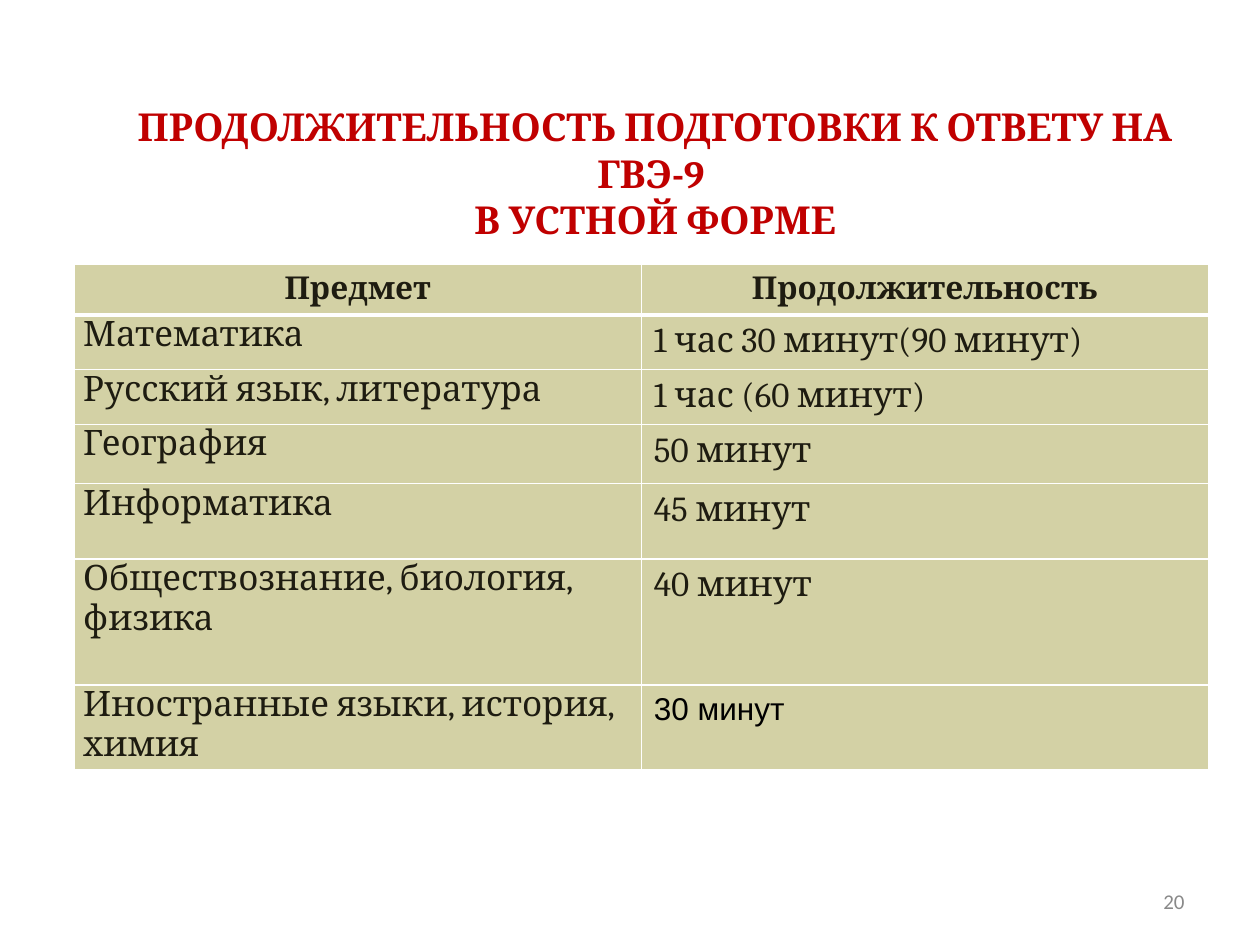
"""Build the slide on preparation times for the oral GVE-9 exam."""
from dataclasses import dataclass
from typing import Any

from lxml import etree
from pptx import Presentation
from pptx import util as u
from pptx.dml.color import RGBColor
from pptx.enum import text
from pptx.oxml import ns


@dataclass(frozen=True)
class Style:
    font: str
    size: int
    color: str
    bold: bool = False


@dataclass(frozen=True)
class Theme:
    title: Style = Style("Cambria", 22, "C00000", True)
    header: Style = Style("Cambria", 18, "1E1C11", True)
    body: Style = Style("Cambria", 20, "1E1C11")
    plain: Style = Style("Arial", 18, "000000")
    number: Style = Style("Calibri", 12, "898989")
    fill: str = "D3D1A5"
    border: str = "FFFFFF"
    thin: int = 1
    thick: int = 3


@dataclass(frozen=True)
class Row:
    subject: str
    duration: str
    height: float
    align: text.PP_ALIGN = text.PP_ALIGN.LEFT
    duration_style: Style = Theme.body


@dataclass(frozen=True)
class Label:
    words: str
    area: tuple[float, float, float, float]
    style: Style
    align: text.PP_ALIGN


THEME = Theme()
ALIGN = text.PP_ALIGN
HEADER = Row("Предмет", "Продолжительность", 0.36, ALIGN.CENTER, THEME.header)
ROWS = [
    Row("Математика", "1 час 30 минут(90 минут)", 0.31, ALIGN.JUSTIFY),
    Row("Русский язык, литература", "1 час (60 минут)", 0.31, ALIGN.JUSTIFY),
    Row("География", "50 минут", 0.47),
    Row("Информатика", "45 минут", 0.6),
    Row("Обществознание, биология, физика", "40 минут", 1),
    Row("Иностранные языки, история, химия", "30 минут", 0.5, duration_style=THEME.plain),
]
LABELS = [
    Label("ПРОДОЛЖИТЕЛЬНОСТЬ ПОДГОТОВКИ К ОТВЕТУ НА ГВЭ-9 \vВ УСТНОЙ ФОРМЕ",
          (0.7, 0.94, 9, 0.86), THEME.title, ALIGN.CENTER),
    Label("20", (7.17, 6.95, 2.33, 0.4), THEME.number, ALIGN.RIGHT),
]


def apply(target: Any, values: dict[str, Any]) -> None:
    """Set each named attribute on the target."""
    for name, value in values.items():
        setattr(target, name, value)


def write(frame: Any, words: str, style: Style, align: text.PP_ALIGN) -> None:
    """Write one styled paragraph into a text frame."""
    para = frame.paragraphs[0]
    apply(para, {"text": words, "alignment": align})
    for span in para.runs:
        apply(span.font, {"name": style.font, "size": u.Pt(style.size), "bold": style.bold})
        span.font.color.rgb = RGBColor.from_string(style.color)


def add_label(page: Any, label: Label) -> None:
    """Add a vertically centred text box."""
    box = page.shapes.add_textbox(*map(u.Inches, label.area))
    apply(box.text_frame, {"word_wrap": True, "vertical_anchor": text.MSO_ANCHOR.MIDDLE})
    write(box.text_frame, label.words, label.style, label.align)


def paint_cell(cell: Any, top: int, bottom: int) -> None:
    """Give a cell its borders and fill."""
    properties = cell._tc.get_or_add_tcPr()
    for side, width in {"L": THEME.thin, "R": THEME.thin, "T": top, "B": bottom}.items():
        line = etree.SubElement(properties, ns.qn(f"a:ln{side}"), w=str(u.Pt(width)))
        solid = etree.SubElement(line, ns.qn("a:solidFill"))
        etree.SubElement(solid, ns.qn("a:srgbClr"), val=THEME.border)
    cell.fill.solid()
    cell.fill.fore_color.rgb = RGBColor.from_string(THEME.fill)


def add_schedule(page: Any) -> None:
    """Add the table of subjects and durations."""
    rows = [HEADER, *ROWS]
    area = map(u.Inches, (0.59, 2.1, 9, sum(row.height for row in rows)))
    table = page.shapes.add_table(len(rows), 2, *area).table
    margins = {"margin_left": u.Inches(0.07), "margin_right": u.Inches(0.07),
               "margin_top": 0, "margin_bottom": 0}
    for index, row in enumerate(rows):
        table.rows[index].height = u.Inches(row.height)
        subject, duration = table.rows[index].cells
        is_header = row is HEADER
        if not is_header:
            apply(subject, margins)
        write(subject.text_frame, row.subject, THEME.header if is_header else THEME.body, row.align)
        write(duration.text_frame, row.duration, row.duration_style,
              row.align if is_header else ALIGN.LEFT)
        for cell in (subject, duration):
            paint_cell(cell, THEME.thick if index == 1 else THEME.thin,
                       THEME.thick if is_header else THEME.thin)


def main() -> None:
    """Create and save the deck."""
    deck = Presentation()
    apply(deck, {"slide_width": u.Inches(10), "slide_height": u.Inches(7.5)})
    page = deck.slides.add_slide(deck.slide_layouts[6])
    for label in LABELS:
        add_label(page, label)
    add_schedule(page)
    deck.save("out.pptx")


if __name__ == "__main__":
    main()
